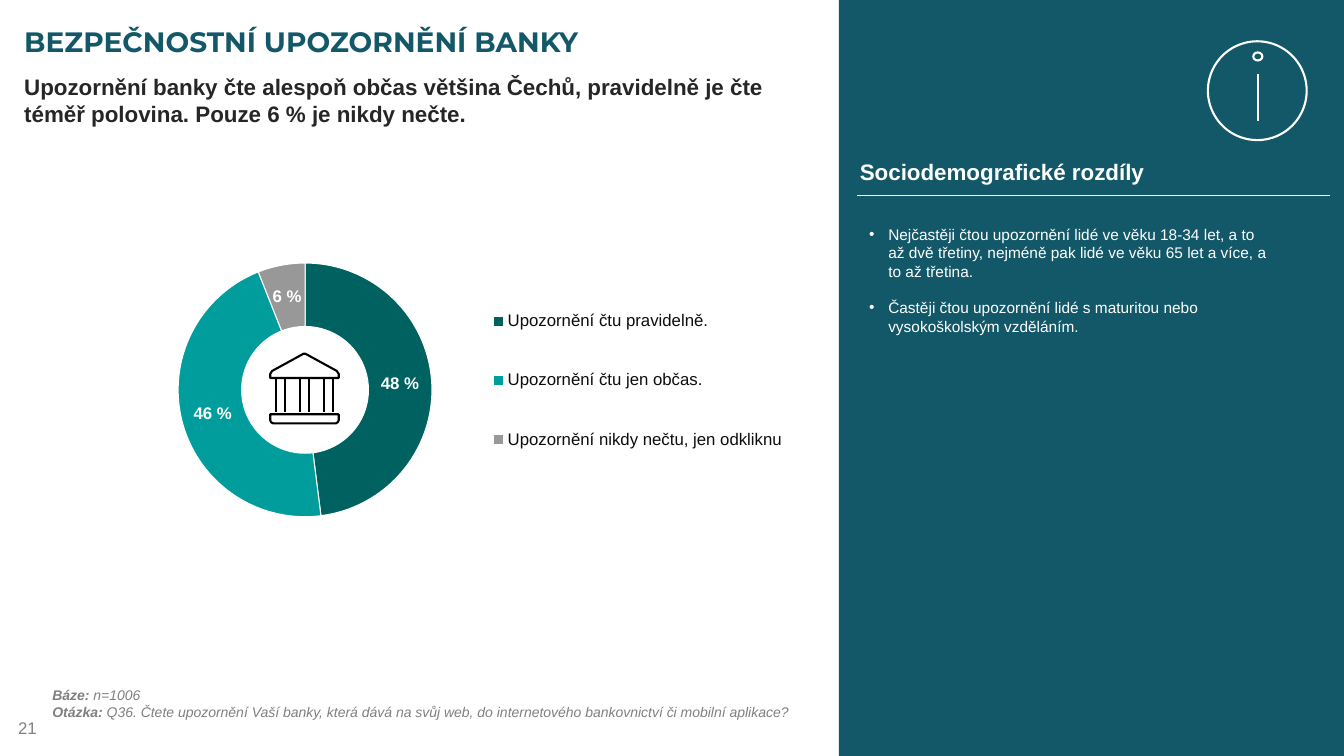
import dataclasses
import typing

import lxml.etree
import pptx
import pptx.chart.data
import pptx.dml.color
import pptx.enum.chart
import pptx.enum.shapes
import pptx.enum.text
import pptx.oxml
import pptx.oxml.ns
import pptx.util

RGBColor = pptx.dml.color.RGBColor
PETROL = RGBColor(0x13, 0x58, 0x68)
PINE = RGBColor(0x00, 0x62, 0x60)
TEAL = RGBColor(0x00, 0x9D, 0x9C)
GREY = RGBColor(0x7F, 0x7F, 0x7F)
MUTED = RGBColor(0x80, 0x80, 0x80)
INK = RGBColor(0x26, 0x26, 0x26)
NIGHT = RGBColor(0x0D, 0x0D, 0x0D)
BLACK = RGBColor(0, 0, 0)
WHITE = RGBColor(0xFF, 0xFF, 0xFF)

# The slide is a grid of square cells, ten to the inch
COLS, ROWS = 133.3, 75
SHAPE = pptx.enum.shapes.MSO_SHAPE
ANCHOR = pptx.enum.text.MSO_ANCHOR


def cell(count: float) -> int:
    return pptx.util.Inches(count / 10)


@dataclasses.dataclass(frozen=True)
class Area:
    col: float
    row: float
    wide: float
    high: float

    def box(self) -> tuple[int, ...]:
        return tuple(cell(n) for n in (self.col, self.row, self.wide, self.high))


@dataclasses.dataclass(frozen=True)
class Style:
    size: float
    color: RGBColor
    bold: bool = False
    slant: bool = False
    face: str = "Arial"


@dataclasses.dataclass(frozen=True)
class Run:
    text: str
    style: Style


@dataclasses.dataclass(frozen=True)
class Slice:
    label: str
    value: int
    color: RGBColor


def set_font(font: typing.Any, style: Style) -> None:
    font.name, font.size = style.face, pptx.util.Pt(style.size)
    font.bold, font.italic = style.bold, style.slant
    font.color.rgb = style.color


def write(shape: typing.Any, area: Area, lines: list[list[Run]], pad: tuple[float, float] = (1, 0.5),
          anchor: typing.Any = ANCHOR.TOP, wrap: bool = True, gap: float = 0) -> None:
    shape.left, shape.top, shape.width, shape.height = area.box()
    frame = shape.text_frame
    frame.word_wrap, frame.vertical_anchor = wrap, anchor
    frame.auto_size = pptx.enum.text.MSO_AUTO_SIZE.NONE
    frame.margin_left = frame.margin_right = cell(pad[0])
    frame.margin_top = frame.margin_bottom = cell(pad[1])
    for i, line in enumerate(lines):
        para = frame.paragraphs[0] if i == 0 else frame.add_paragraph()
        para.alignment = pptx.enum.text.PP_ALIGN.LEFT
        para.space_before = pptx.util.Pt(gap if i else 0)
        for part in line:
            run = para.add_run()
            run.text = part.text
            set_font(run.font, part.style)


def indent(para: typing.Any, left: float, hang: float, dot: str = "") -> None:
    props = para._p.get_or_add_pPr()
    props.set("marL", str(cell(left)))
    props.set("indent", str(-cell(hang)))
    mark = lxml.etree.SubElement(props, pptx.oxml.ns.qn("a:buChar" if dot else "a:buNone"))
    if dot:
        mark.set("char", dot)


def add_text(shapes: typing.Any, area: Area, lines: list[list[Run]], **opts: typing.Any) -> None:
    write(shapes.add_textbox(*area.box()), area, lines, **opts)


def outline(shape: typing.Any, color: RGBColor, width: float = 1.5) -> None:
    shape.shadow.inherit = False
    shape.fill.background()
    shape.line.color.rgb, shape.line.width = color, pptx.util.Pt(width)


def add_line(shapes: typing.Any, start: tuple[float, float], end: tuple[float, float],
             color: RGBColor, width: float = 1.5) -> None:
    line = shapes.add_connector(pptx.enum.shapes.MSO_CONNECTOR.STRAIGHT,
                                *(cell(n) for n in start + end))
    line.line.color.rgb, line.line.width = color, pptx.util.Pt(width)
    lxml.etree.SubElement(line._element.spPr, pptx.oxml.ns.qn("a:effectLst"))


def add_ring(shapes: typing.Any, area: Area) -> None:
    outline(shapes.add_shape(SHAPE.OVAL, *area.box()), WHITE)


def add_path(shapes: typing.Any, points: list[tuple[float, float]]) -> None:
    spots = [(cell(x), cell(y)) for x, y in points]
    path = shapes.build_freeform(*spots[0], scale=1.0)
    path.add_line_segments(spots[1:], close=True)
    outline(path.convert_to_shape(), BLACK)


def layout(x: float, y: float, w: float, h: float, inner: bool = False) -> typing.Any:
    target = '<c:layoutTarget val="inner"/>' if inner else ""
    return pptx.oxml.parse_xml(
        f'<c:layout {pptx.oxml.ns.nsdecls("c")}><c:manualLayout>{target}'
        '<c:xMode val="edge"/><c:yMode val="edge"/>'
        f'<c:x val="{x}"/><c:y val="{y}"/><c:w val="{w}"/><c:h val="{h}"/>'
        '</c:manualLayout></c:layout>')


def add_ratio(shapes: typing.Any, area: Area, parts: list[Slice]) -> None:
    data = pptx.chart.data.CategoryChartData()
    data.categories = [part.label for part in parts]
    data.add_series("Series 1", [part.value for part in parts])
    chart = shapes.add_chart(pptx.enum.chart.XL_CHART_TYPE.DOUGHNUT, *area.box(), data).chart
    set_font(chart.font, Style(10, BLACK))
    chart.has_title = False
    plot = chart.plots[0]
    plot.vary_by_categories = True
    for i, part in enumerate(parts):
        form = plot.series[0].points[i].format
        form.fill.solid()
        form.fill.fore_color.rgb = part.color
        form.line.color.rgb, form.line.width = WHITE, pptx.util.Pt(0.75)
        if part.color == GREY:
            tint = next(form.fill._xPr.iter(pptx.oxml.ns.qn("a:srgbClr")))
            lxml.etree.SubElement(tint, pptx.oxml.ns.qn("a:alpha")).set("val", "80000")
    labels = plot.series[0].data_labels
    labels.show_value, labels.show_percentage = True, False
    labels.number_format, labels.number_format_is_linked = '#,##0\\ "%";\\-#,##0"%"', False
    set_font(labels.font, Style(12, WHITE, bold=True))
    # Place the ring and spread the legend beside it
    room = chart._chartSpace.chart.plotArea
    for old in room.findall(pptx.oxml.ns.qn("c:layout")):
        room.remove(old)
    room.insert(0, layout(0.096, 0.17, 0.428, 0.639, inner=True))
    chart.has_legend = True
    key = chart.legend
    key.position = pptx.enum.chart.XL_LEGEND_POSITION.RIGHT
    key.include_in_layout = False
    set_font(key.font, Style(12, NIGHT))
    for old in key._element.findall(pptx.oxml.ns.qn("c:layout")):
        key._element.remove(old)
    key._element.find(pptx.oxml.ns.qn("c:legendPos")).addnext(layout(0.54, 0.19, 0.44, 0.55))


def main() -> None:
    deck = pptx.Presentation()
    deck.slide_width, deck.slide_height = cell(COLS), cell(ROWS)
    slide = deck.slides.add_slide(deck.slide_layouts[3])
    shapes, holders = slide.shapes, slide.placeholders

    # Side panel, behind the text
    panel = shapes.add_shape(SHAPE.RECTANGLE, *Area(83.2, 0, COLS - 83.2, ROWS).box())
    panel.shadow.inherit = False
    panel.fill.solid()
    panel.fill.fore_color.rgb = PETROL
    panel.line.fill.background()
    shapes.title.element.addprevious(panel.element)

    # Title and main finding
    write(shapes.title, Area(1.4, 1.4, 130.5, 5.3), [[Run(
        "BEZPEČNOSTNÍ UPOZORNĚNÍ BANKY", Style(20, PETROL, bold=True, face="Montserrat"))]],
        anchor=ANCHOR.MIDDLE)
    write(holders[1], Area(1.4, 6.8, 81.8, 7), [[Run(
        "Upozornění banky čte alespoň občas většina Čechů, pravidelně je čte téměř polovina. "
        "Pouze 6 % je nikdy nečte.", Style(16, INK, bold=True))]])
    indent(holders[1].text_frame.paragraphs[0], 0, 0)

    # Panel heading and list
    add_text(shapes, Area(84.3, 15.2, 30.6, 3.7), [[Run(
        "Sociodemografické rozdíly", Style(16, WHITE, bold=True))]], wrap=False)
    add_line(shapes, (85, 19.4), (131.9, 19.4), WHITE, 0.5)
    plain = Style(11, WHITE)
    write(holders[2], Area(85.2, 21.8, 41.7, 12.1), [
        [Run("Nejčastěji čtou upozornění lidé ve věku 18-34 let, a to až dvě třetiny, "
             "nejméně pak lidé ve věku 65 let a více, a to až třetina.", plain)],
        [Run("Častěji čtou upozornění lidé s maturitou nebo vysokoškolským vzděláním.", plain)],
    ], gap=13)
    for para in holders[2].text_frame.paragraphs:
        indent(para, 1.9, 1.9, "•")

    # Info icon
    info = shapes.add_group_shape().shapes
    add_ring(info, Area(119.8, 4.1, 9.8, 9.8))
    add_line(info, (124.8, 7.3), (124.8, 12), WHITE)
    add_ring(info, Area(124.3, 5.2, 0.9, 0.8))

    # Ring chart
    add_ratio(shapes, Area(7.5, 19.4, 73.4, 39.4), [
        Slice("Upozornění čtu pravidelně.", 48, PINE),
        Slice("Upozornění čtu jen občas.", 46, TEAL),
        Slice("Upozornění nikdy nečtu, jen odkliknu", 6, GREY)])

    # Bank icon: roof, three pairs of pillars, base
    bank = shapes.add_group_shape().shapes
    add_path(bank, [(33.6, 37.5), (26.8, 37.5), (26.8, 37.1), (27, 36.8),
                    (30.1, 35.1), (30.3, 35.1), (33.4, 36.8), (33.6, 37.1)])
    for pair in range(3):
        for side in (0, 0.9):
            x = 27.4 + 2.35 * pair + side
            add_line(bank, (x, 37.5), (x, 40.9), BLACK)
    add_path(bank, [(33.3, 42), (27.1, 42), (26.9, 41.9), (26.8, 41.7),
                    (26.8, 41.1), (33.6, 41.1), (33.6, 41.7), (33.5, 41.9)])

    # Source note and page number
    strong, note = Style(10, MUTED, True, True), Style(10, MUTED, slant=True)
    add_text(shapes, Area(5.2, 68.1, 78, 3.4), [
        [Run("Báze: ", strong), Run("n=1006", note)],
        [Run("Otázka: ", strong),
         Run("Q36. Čtete upozornění Vaší banky, která dává na svůj web, do internetového "
             "bankovnictví či mobilní aplikace?", note)]], pad=(0, 0))
    add_text(shapes, Area(0.5, 70.2, 31.1, 4), [[Run("21", Style(12, MUTED))]],
             pad=(1.3, 0.7), anchor=ANCHOR.MIDDLE)
    deck.save("out.pptx")


if __name__ == "__main__":
    main()
